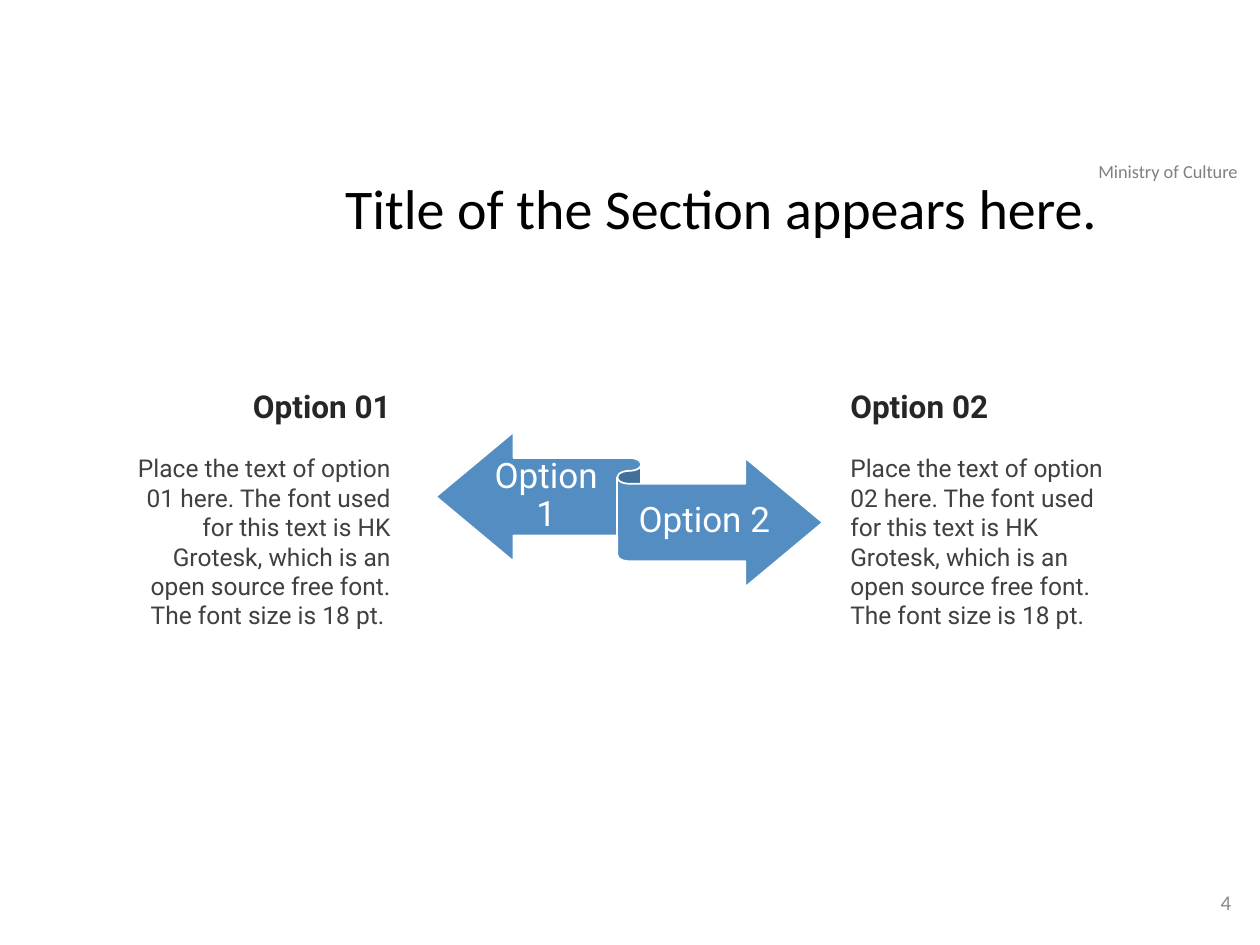
from dataclasses import dataclass

from pptx import Presentation
from pptx.dml.color import RGBColor
from pptx.enum.shapes import MSO_SHAPE
from pptx.enum.text import MSO_ANCHOR, PP_ALIGN
from pptx.slide import Slide
from pptx.text.text import TextFrame
from pptx.util import Inches, Pt


@dataclass
class Line:
    text: str
    size: float
    color: str
    font: str = "Roboto"
    bold: bool = False
    spacing: float = 1.0
    after: float = 0


@dataclass
class Option:
    number: int
    left: float
    width: float
    align: PP_ALIGN
    end: str
    label: tuple[float, float, float]


OPTIONS = [
    Option(1, 0.92, 2.28, PP_ALIGN.RIGHT, " ", (3.83, 3.64, 1.01)),
    Option(2, 6.65, 2.21, PP_ALIGN.LEFT, "", (4.99, 3.84, 1.2)),
]


def paint(target, color: str) -> None:
    """Give a fill or a line format one solid colour."""
    fill = getattr(target, "fill", target)
    fill.solid()
    fill.fore_color.rgb = RGBColor.from_string(color)


def add_text(slide: Slide, box: tuple[float, float, float, float],
             lines: list[Line], align: PP_ALIGN = PP_ALIGN.LEFT,
             anchor: MSO_ANCHOR = MSO_ANCHOR.TOP) -> TextFrame:
    frame = slide.shapes.add_textbox(*map(Inches, box)).text_frame
    frame.word_wrap = True
    frame.vertical_anchor = anchor
    for index, line in enumerate(lines):
        para = frame.add_paragraph() if index else frame.paragraphs[0]
        para.text = line.text
        para.alignment = align
        para.line_spacing = line.spacing
        para.space_after = Pt(line.after)
        font = para.font
        font.name, font.size, font.bold = line.font, Pt(line.size), line.bold
        paint(font, line.color)
    return frame


def add_ribbon(slide: Slide) -> None:
    ribbon = slide.shapes.add_shape(
        MSO_SHAPE.LEFT_RIGHT_RIBBON,
        Inches(3.46), Inches(3.43), Inches(3.07), Inches(1.23))
    ribbon.shadow.inherit = False
    paint(ribbon, "538DC1")
    paint(ribbon.line, "FFFFFF")
    ribbon.line.width = Pt(1)


def add_option(slide: Slide, option: Option) -> None:
    """Draw the label on the ribbon and the text beside it."""
    num = option.number
    label = add_text(
        slide, (*option.label, 0.6),
        [Line(f"Option {num}", 20, "FFFFFF", spacing=0.9)],
        PP_ALIGN.CENTER, MSO_ANCHOR.MIDDLE)
    label.margin_left = label.margin_right = 0
    label.margin_top = label.margin_bottom = Inches(0.08)

    body = (f"Place the text of option {num:02} here. The font used for this "
            "text is HK Grotesk, which is an open source free font. "
            f"The font size is 18 pt.{option.end}")
    add_text(
        slide, (option.left, 3.02, option.width, 2.27),
        [Line(f"Option {num:02}", 18, "262626", bold=True, after=16.5),
         Line(body, 14, "404040")],
        option.align)


def main() -> None:
    deck = Presentation()
    deck.slide_width, deck.slide_height = Inches(10), Inches(7.5)
    slide = deck.slides.add_slide(deck.slide_layouts[6])

    add_text(slide, (8.18, 1.22, 2.18, 0.28),
             [Line("Ministry of Culture", 10.5, "808080", "Calibri")],
             PP_ALIGN.CENTER)
    add_ribbon(slide)
    for option in OPTIONS:
        add_option(slide, option)
    add_text(slide, (7.62, 6.96, 2.25, 0.4),
             [Line("4", 12, "8C8C8C", "Calibri")],
             PP_ALIGN.RIGHT, MSO_ANCHOR.MIDDLE)
    add_text(slide, (2.64, 1.39, 6.62, 0.79),
             [Line("Title of the Section appears here.", 32, "000000",
                   "Calibri", spacing=0.9)])
    deck.save("out.pptx")


if __name__ == "__main__":
    main()
